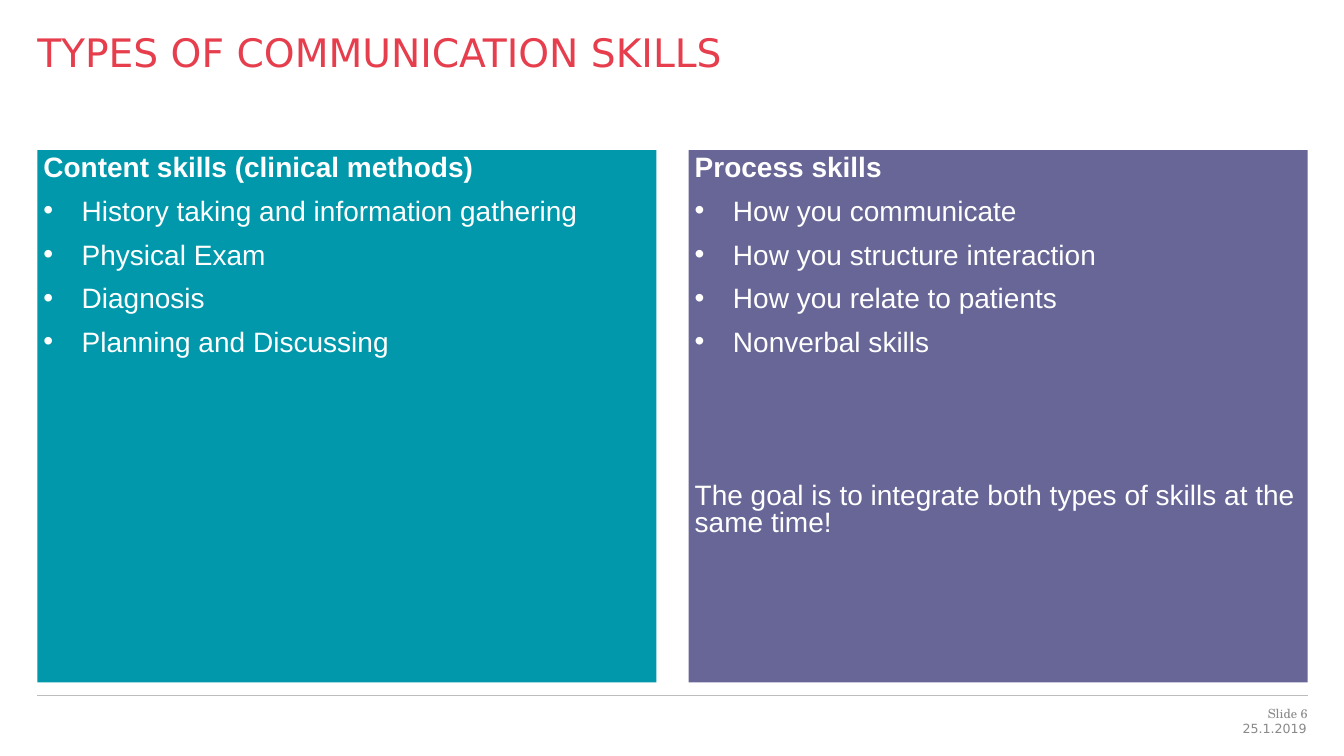
from lxml import etree
from pptx import Presentation
from pptx.dml.color import RGBColor
from pptx.enum.shapes import MSO_CONNECTOR
from pptx.enum.text import MSO_ANCHOR, MSO_AUTO_SIZE, PP_ALIGN
from pptx.oxml.ns import qn
from pptx.util import Inches, Pt

LEFT, RIGHT, TOP = PP_ALIGN.LEFT, PP_ALIGN.RIGHT, MSO_ANCHOR.TOP
NO_AUTOFIT = MSO_AUTO_SIZE.NONE
STRAIGHT = MSO_CONNECTOR.STRAIGHT

RED = RGBColor(0xE6, 0x3E, 0x4D)
TEAL = RGBColor(0x00, 0x98, 0xAA)
PURPLE = RGBColor(0x67, 0x66, 0x96)
WHITE = RGBColor(0xFF, 0xFF, 0xFF)
GRAY = RGBColor(0x89, 0x89, 0x89)
RULE_GRAY = RGBColor(0xBC, 0xBC, 0xBC)

MARGIN, CONTENT_WIDTH = 0.37, 12.6
PANEL_WIDTH, PANEL_PITCH = 6.14, 6.46

PANELS = [
    (TEAL, "Content skills (clinical methods)",
     ["History taking and information gathering", "Physical Exam",
      "Diagnosis", "Planning and Discussing"], None),
    (PURPLE, "Process skills",
     ["How you communicate", "How you structure interaction",
      "How you relate to patients", "Nonverbal skills"],
     "The goal is to integrate both types of skills at the same time!"),
]


def place(shape, left, top, width, height):
    shape.left, shape.top = Inches(left), Inches(top)
    shape.width, shape.height = Inches(width), Inches(height)


def set_frame(text_frame, inset):
    text_frame.auto_size = NO_AUTOFIT
    text_frame.word_wrap = True
    text_frame.vertical_anchor = TOP
    text_frame.margin_left = text_frame.margin_right = Inches(inset)
    text_frame.margin_top = text_frame.margin_bottom = Inches(inset)


def format_runs(paragraph, font_name, size, color, bold=False):
    for run in paragraph.runs:
        run.font.name = font_name
        run.font.size = Pt(size)
        run.font.color.rgb = color
        run.font.bold = bold


def set_bullet(paragraph, bulleted):
    properties = paragraph._p.get_or_add_pPr()
    indent = Inches(0.38) if bulleted else 0
    properties.set("marL", str(indent))
    properties.set("indent", str(-indent))
    if bulleted:
        etree.SubElement(properties, qn("a:buFont")).set("typeface", "Arial")
        etree.SubElement(properties, qn("a:buChar")).set("char", "•")
    else:
        etree.SubElement(properties, qn("a:buNone"))


def add_title(slide, text):
    title = slide.shapes.title
    place(title, MARGIN, 0.28, CONTENT_WIDTH, 0.94)
    set_frame(title.text_frame, 0)
    title.text_frame.text = text
    paragraph = title.text_frame.paragraphs[0]
    paragraph.alignment = LEFT
    format_runs(paragraph, "DejaVu Sans", 28, RED)


def fill_panel(panel, left, color, heading, skills, goal):
    place(panel, left, 1.49, PANEL_WIDTH, 5.28)
    panel.fill.solid()
    panel.fill.fore_color.rgb = color
    text_frame = panel.text_frame
    set_frame(text_frame, 0.06)
    lines = [(heading, 0, False)] + [(skill, 12, True) for skill in skills]
    if goal:
        lines.append((goal, 90, False))
    text_frame.text = "\n".join(text for text, _, _ in lines)
    for paragraph, (text, space, bulleted) in zip(text_frame.paragraphs, lines):
        set_bullet(paragraph, bulleted)
        paragraph.line_spacing = 0.8
        paragraph.space_before = Pt(space)
        paragraph.space_after = Pt(0)
        format_runs(paragraph, "Arial", 20, WHITE, text == heading)


def add_footer_text(slide, text, font_name, left, top, width, height):
    box = slide.shapes.add_textbox(0, 0, 0, 0)
    place(box, left, top, width, height)
    set_frame(box.text_frame, 0)
    box.text_frame.text = text
    paragraph = box.text_frame.paragraphs[0]
    paragraph.alignment = RIGHT
    format_runs(paragraph, font_name, 9, GRAY)


def add_footer_rule(slide):
    rule = slide.shapes.add_connector(
        STRAIGHT, Inches(MARGIN), Inches(6.9),
        Inches(MARGIN + CONTENT_WIDTH), Inches(6.9))
    rule.line.color.rgb = RULE_GRAY
    rule.line.width = Pt(0.25)
    etree.SubElement(rule._element.spPr, qn("a:effectLst"))


def main():
    presentation = Presentation()
    presentation.slide_width = Inches(13.33)
    presentation.slide_height = Inches(7.5)
    slide = presentation.slides.add_slide(presentation.slide_layouts[3])
    add_footer_rule(slide)
    add_title(slide, "TYPES OF COMMUNICATION SKILLS")
    for index, content in enumerate(PANELS):
        panel = slide.placeholders[index + 1]
        fill_panel(panel, MARGIN + index * PANEL_PITCH, *content)
    add_footer_text(slide, "25.1.2019", "DejaVu Sans", 11.11, 7.15, 1.85, 0.2)
    add_footer_text(slide, "Slide 6", "TeX Gyre Schola", 11.48, 7, 1.49, 0.14)
    presentation.save("out.pptx")


if __name__ == "__main__":
    main()
